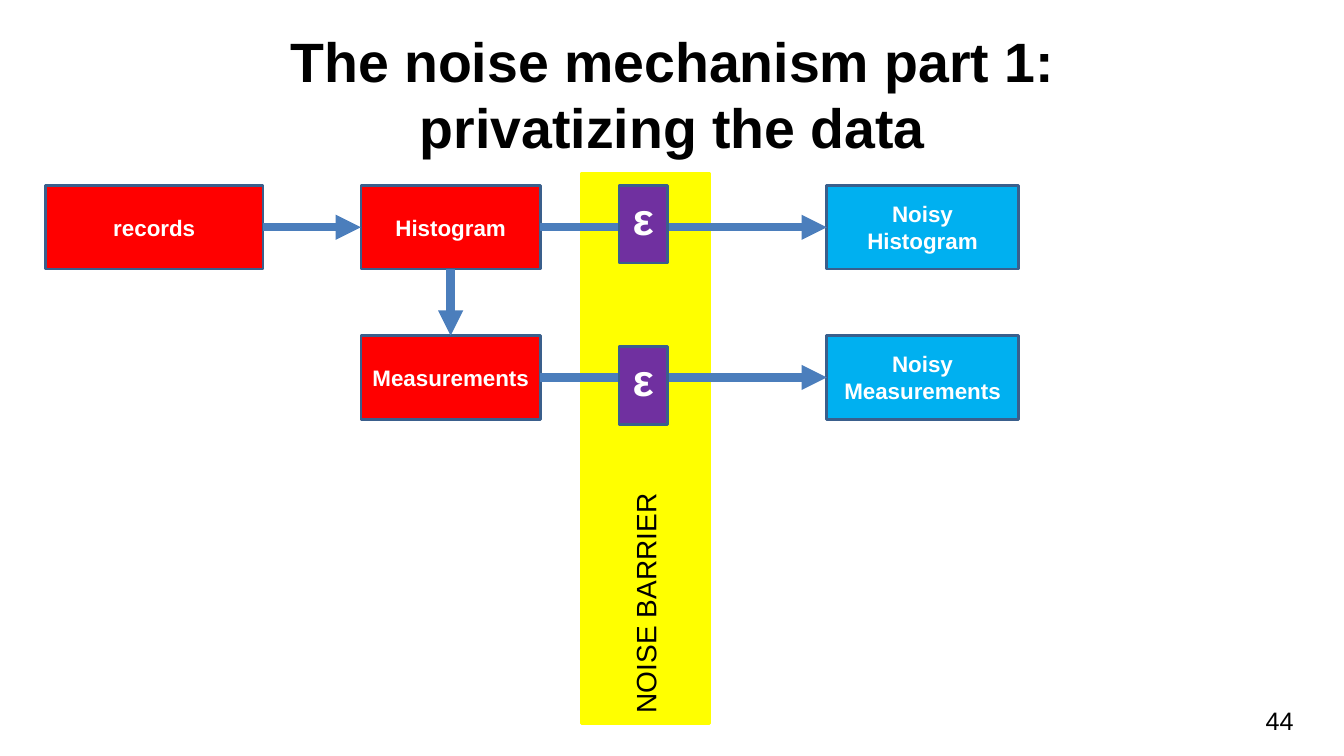
from dataclasses import dataclass

from lxml import etree
from pptx import Presentation
from pptx.dml.color import RGBColor
from pptx.enum.shapes import MSO_CONNECTOR, MSO_SHAPE
from pptx.enum.text import MSO_ANCHOR, MSO_AUTO_SIZE, PP_ALIGN
from pptx.oxml.ns import qn
from pptx.util import Pt

RECTANGLE = MSO_SHAPE.RECTANGLE
STRAIGHT = MSO_CONNECTOR.STRAIGHT
TOP, MIDDLE = MSO_ANCHOR.TOP, MSO_ANCHOR.MIDDLE
LEFT, CENTER, RIGHT = PP_ALIGN.LEFT, PP_ALIGN.CENTER, PP_ALIGN.RIGHT
NO_FIT = MSO_AUTO_SIZE.NONE
SIDE_TOP, SIDE_LEFT, SIDE_BOTTOM, SIDE_RIGHT = range(4)
EMU_PER_PX = 9144


@dataclass(frozen=True)
class Theme:
    font: str = "Arial"
    ink: str = "000000"
    paper: str = "FFFFFF"
    private: str = "FF0000"
    released: str = "00B0F0"
    noise: str = "7030A0"
    barrier: str = "FFFF00"
    outline: str = "3A5F8C"
    arrow: str = "4B7EBC"
    title_size: float = 39.6
    noise_size: int = 32
    barrier_size: int = 20
    number_size: int = 18
    node_size: int = 16
    outline_width: int = 2
    arrow_width: int = 6


THEME = Theme()


def px(*lengths):
    return [length * EMU_PER_PX for length in lengths]


def color(code):
    return RGBColor.from_string(code)


def write(shape, text, size, ink, bold=False, align=CENTER, anchor=MIDDLE):
    frame = shape.text_frame
    frame.text = text
    frame.word_wrap = True
    frame.auto_size = NO_FIT
    frame.vertical_anchor = anchor
    para = frame.paragraphs[0]
    para.alignment = align
    para.font.name = THEME.font
    para.font.size = Pt(size)
    para.font.bold = bold
    para.font.color.rgb = color(ink)


def add_block(page, box, fill, outline):
    block = page.shapes.add_shape(RECTANGLE, *px(*box))
    block.shadow.inherit = False
    block.fill.solid()
    block.fill.fore_color.rgb = color(fill)
    block.line.color.rgb = color(outline)
    block.line.width = Pt(THEME.outline_width)
    return block


def add_node(page, box, text, fill):
    node = add_block(page, box, fill, THEME.outline)
    write(node, text, THEME.node_size, THEME.paper, bold=True)
    return node


def add_noise(page, box):
    noise = add_block(page, box, THEME.noise, THEME.outline)
    write(noise, "ε", THEME.noise_size, THEME.paper, bold=True, anchor=TOP)


def add_arrow(page, start, start_side, end, end_side):
    arrow = page.shapes.add_connector(STRAIGHT, 0, 0, 0, 0)
    arrow.begin_connect(start, start_side)
    arrow.end_connect(end, end_side)
    arrow.line.color.rgb = color(THEME.arrow)
    arrow.line.width = Pt(THEME.arrow_width)
    etree.SubElement(arrow.line._get_or_add_ln(), qn("a:tailEnd"), type="triangle")
    etree.SubElement(arrow._element.spPr, qn("a:effectLst"))


def add_title(page, box, text):
    title = page.shapes.title
    title.left, title.top, title.width, title.height = px(*box)
    write(title, text, THEME.title_size, THEME.ink, bold=True)


def add_barrier(page, box):
    left, top, width, height = box
    shift = (height - width) // 2
    barrier = add_block(
        page, (left - shift, top + shift, height, width), THEME.barrier, THEME.barrier
    )
    barrier.rotation = 270
    write(barrier, "NOISE BARRIER", THEME.barrier_size, THEME.ink, align=LEFT)


def add_flow(page, box):
    left, top, width, height = box
    node_height = 83
    private_left, private_width = left + 313, 178
    released_width = 190
    released_left = left + width - released_width
    lower_top = top + height - node_height

    records = add_node(page, (left, top, 216, node_height), "records", THEME.private)
    private_nodes = []
    rows = ((top, "Histogram", 0), (lower_top, "Measurements", 11))
    for row_top, name, noise_drop in rows:
        private = add_node(
            page, (private_left, row_top, private_width, node_height), name, THEME.private
        )
        released = add_node(
            page,
            (released_left, row_top, released_width, node_height),
            f"Noisy {name}",
            THEME.released,
        )
        add_arrow(page, private, SIDE_RIGHT, released, SIDE_LEFT)
        add_noise(page, (left + 569, row_top + noise_drop, 48, 77))
        private_nodes.append(private)

    histogram, measurements = private_nodes
    add_arrow(page, records, SIDE_RIGHT, histogram, SIDE_LEFT)
    add_arrow(page, histogram, SIDE_BOTTOM, measurements, SIDE_TOP)


def add_page_number(page, box, text):
    number = page.shapes.add_textbox(*px(*box))
    write(number, text, THEME.number_size, THEME.ink, align=RIGHT, anchor=TOP)


def main():
    deck = Presentation()
    deck.slide_width, deck.slide_height = px(1333, 750)
    page = deck.slides.add_slide(deck.slide_layouts.get_by_name("Title Only"))
    add_title(page, (67, 30, 1200, 125), "The noise mechanism part 1:\vprivatizing the data")
    add_barrier(page, (576, 172, 127, 546))
    add_flow(page, (45, 184, 965, 232))
    add_page_number(page, (1010, 695, 283, 39), "44")
    deck.save("out.pptx")


if __name__ == "__main__":
    main()
